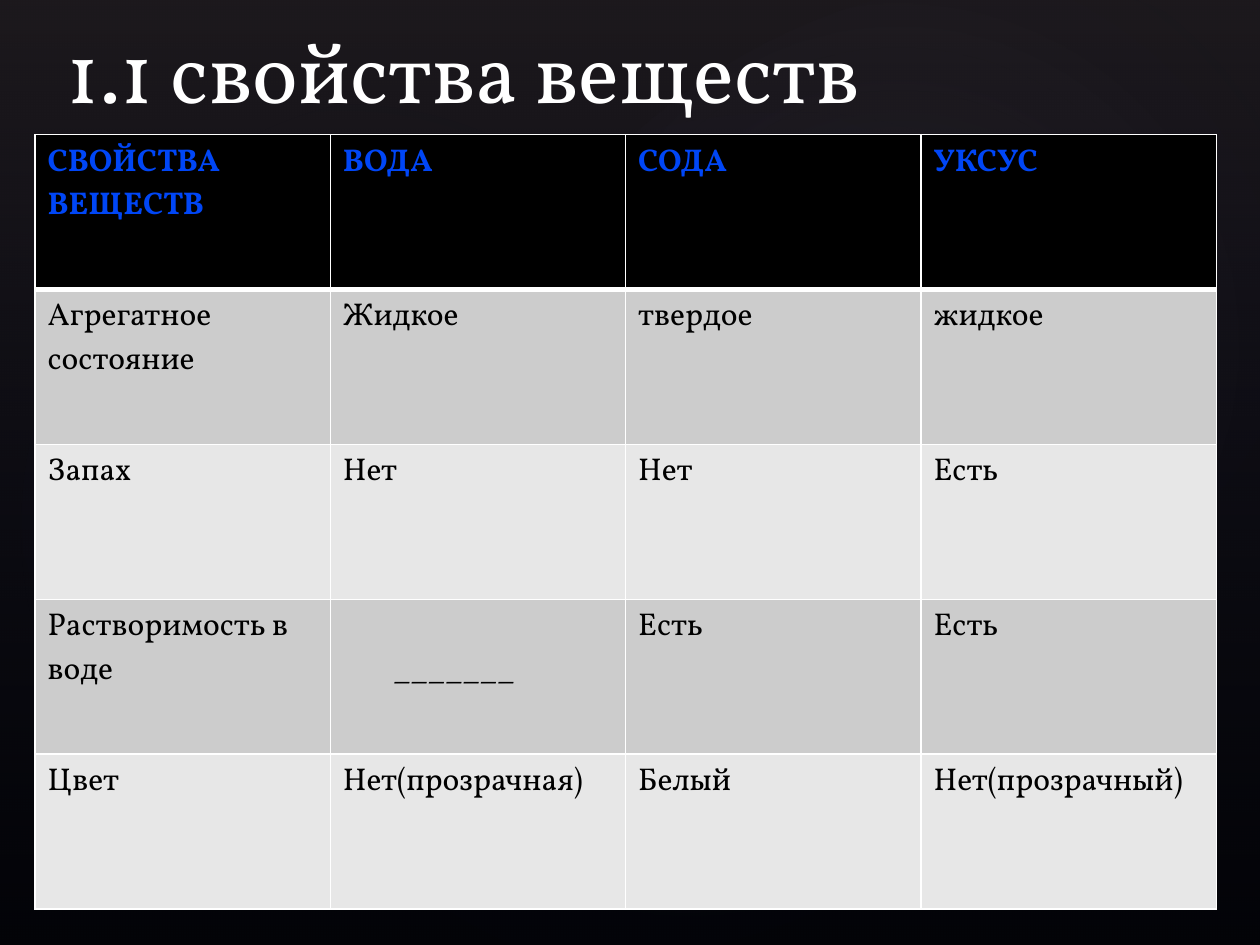
"""Build a slide with a table comparing the properties of water, soda and vinegar."""
from dataclasses import dataclass

from lxml.etree import SubElement
from pptx import Presentation
from pptx.dml.color import RGBColor
from pptx.enum.shapes import MSO_SHAPE
from pptx.enum.text import MSO_ANCHOR, MSO_AUTO_SIZE, PP_ALIGN
from pptx.oxml import parse_xml
from pptx.oxml.ns import nsdecls, qn
from pptx.slide import Slide
from pptx.table import _Cell
from pptx.text.text import TextFrame
from pptx.util import Pt

FONT = "Vollkorn"
WHITE = RGBColor(0xFF, 0xFF, 0xFF)
BLACK = RGBColor(0x00, 0x00, 0x00)
BLUE = RGBColor(0x00, 0x46, 0xF6)
DARK_BAND = RGBColor(0xCC, 0xCC, 0xCC)
LIGHT_BAND = RGBColor(0xE7, 0xE7, 0xE7)
PLUM = RGBColor(0x50, 0x46, 0x52)
NAVY = RGBColor(0x24, 0x28, 0x52)
LILAC = RGBColor(0xC4, 0xBC, 0xC6)

COLUMN_WIDTH = 168.75
ROW_HEIGHT = 88.5
DASHES = "_______"
ROWS = [
    ["СВОЙСТВА ВЕЩЕСТВ", "ВОДА", "СОДА", "УКСУС"],
    ["Агрегатное состояние", "Жидкое", "твердое", "жидкое"],
    ["Запах", "Нет", "Нет", "Есть"],
    ["Растворимость в воде", DASHES, "Есть", "Есть"],
    ["Цвет", "Нет(прозрачная)", "Белый", "Нет(прозрачный)"],
]


@dataclass
class Stop:
    position: int
    color: RGBColor
    opacity: int


@dataclass
class Glow:
    shape_type: MSO_SHAPE
    left: float
    top: float
    width: float
    height: float
    rotation: float
    stops: list[Stop]
    direction: str


LINEAR = '<a:lin ang="5400000" scaled="0"/>'
RADIAL = '<a:path path="circle"><a:fillToRect l="50000" t="50000" r="50000" b="50000"/></a:path>'
FADE = Stop(58, NAVY, 0)
GLOWS = [
    Glow(MSO_SHAPE.RECTANGLE, 0, 0, 720, 540, 0, [Stop(0, PLUM, 36), Stop(100, NAVY, 10)], LINEAR),
    Glow(MSO_SHAPE.OVAL, 108, 82, 570, 449, 328.7, [Stop(0, LILAC, 7), FADE], RADIAL),
    Glow(MSO_SHAPE.OVAL, -21.5, 92, 436, 353, 294.3, [Stop(0, LILAC, 8), FADE], RADIAL),
    Glow(MSO_SHAPE.OVAL, 258, 9.5, 510.5, 374.5, 328.7, [Stop(0, LILAC, 8), FADE], RADIAL),
]


def add_glow(page: Slide, glow: Glow) -> None:
    """Draw one translucent gradient shape."""
    shape = page.shapes.add_shape(
        glow.shape_type, Pt(glow.left), Pt(glow.top), Pt(glow.width), Pt(glow.height))
    shape.rotation = glow.rotation
    shape.shadow.inherit = False
    shape.line.fill.background()
    stops = "".join(
        f'<a:gs pos="{stop.position * 1000}"><a:srgbClr val="{stop.color}">'
        f'<a:alpha val="{stop.opacity * 1000}"/></a:srgbClr></a:gs>'
        for stop in glow.stops)
    gradient = parse_xml(
        f'<a:gradFill {nsdecls("a")} rotWithShape="1"><a:gsLst>{stops}</a:gsLst>'
        f'{glow.direction}</a:gradFill>')
    shape.element.spPr.find(qn("a:prstGeom")).addnext(gradient)


def format_text(frame: TextFrame, size: float, color: RGBColor, bold: bool = False) -> None:
    """Set the font of every run in a text frame."""
    for para in frame.paragraphs:
        for span in para.runs:
            span.font.name = FONT
            span.font.size = Pt(size)
            span.font.bold = bold
            span.font.color.rgb = color


def add_border(cell: _Cell, side: str, width: float) -> None:
    """Draw a white line on one side of a cell."""
    properties = cell._tc.get_or_add_tcPr()
    line = SubElement(properties, qn(f"a:ln{side}"), w=str(Pt(width)))
    SubElement(SubElement(line, qn("a:solidFill")), qn("a:srgbClr"), val=str(WHITE))


def fill_cell(cell: _Cell, text: str, row: int) -> None:
    """Write and format one table cell."""
    heading = row == 0
    for side in "LRTB":
        thick = (row, side) in ((0, "B"), (1, "T"))
        add_border(cell, side, 3 if thick else 1)
    cell.fill.solid()
    cell.fill.fore_color.rgb = BLACK if heading else DARK_BAND if row % 2 else LIGHT_BAND
    cell.text_frame.text = text
    format_text(cell.text_frame, 18, BLUE if heading else BLACK, heading)
    if text == DASHES:
        cell.margin_left = Pt(36)
        cell.margin_top = Pt(28.8)


def add_title(page: Slide, text: str) -> None:
    """Place the title above the backdrop."""
    title = page.shapes.title
    title.left, title.top, title.width, title.height = Pt(31), Pt(0.7), Pt(594), Pt(72)
    frame = title.text_frame
    frame.text = text
    frame.auto_size = MSO_AUTO_SIZE.NONE
    frame.vertical_anchor = MSO_ANCHOR.BOTTOM
    frame.paragraphs[0].alignment = PP_ALIGN.LEFT
    format_text(frame, 49, WHITE)
    page.shapes.element.append(title.element)


def add_property_table(page: Slide) -> None:
    """Add the table of substances and their properties."""
    table = page.shapes.add_table(
        len(ROWS), len(ROWS[0]), Pt(20), Pt(77),
        Pt(COLUMN_WIDTH * len(ROWS[0])), Pt(ROW_HEIGHT * len(ROWS))).table
    for column in table.columns:
        column.width = Pt(COLUMN_WIDTH)
    for row, texts in enumerate(ROWS):
        table.rows[row].height = Pt(ROW_HEIGHT)
        for column, text in enumerate(texts):
            fill_cell(table.cell(row, column), text, row)


def main() -> None:
    """Assemble and save the deck."""
    deck = Presentation()
    deck.slide_width, deck.slide_height = Pt(720), Pt(540)
    page = deck.slides.add_slide(deck.slide_layouts[5])
    page.background.fill.solid()
    page.background.fill.fore_color.rgb = BLACK
    for glow in GLOWS:
        add_glow(page, glow)
    add_title(page, "1.1 свойства веществ")
    add_property_table(page)
    deck.save("out.pptx")


if __name__ == "__main__":
    main()
